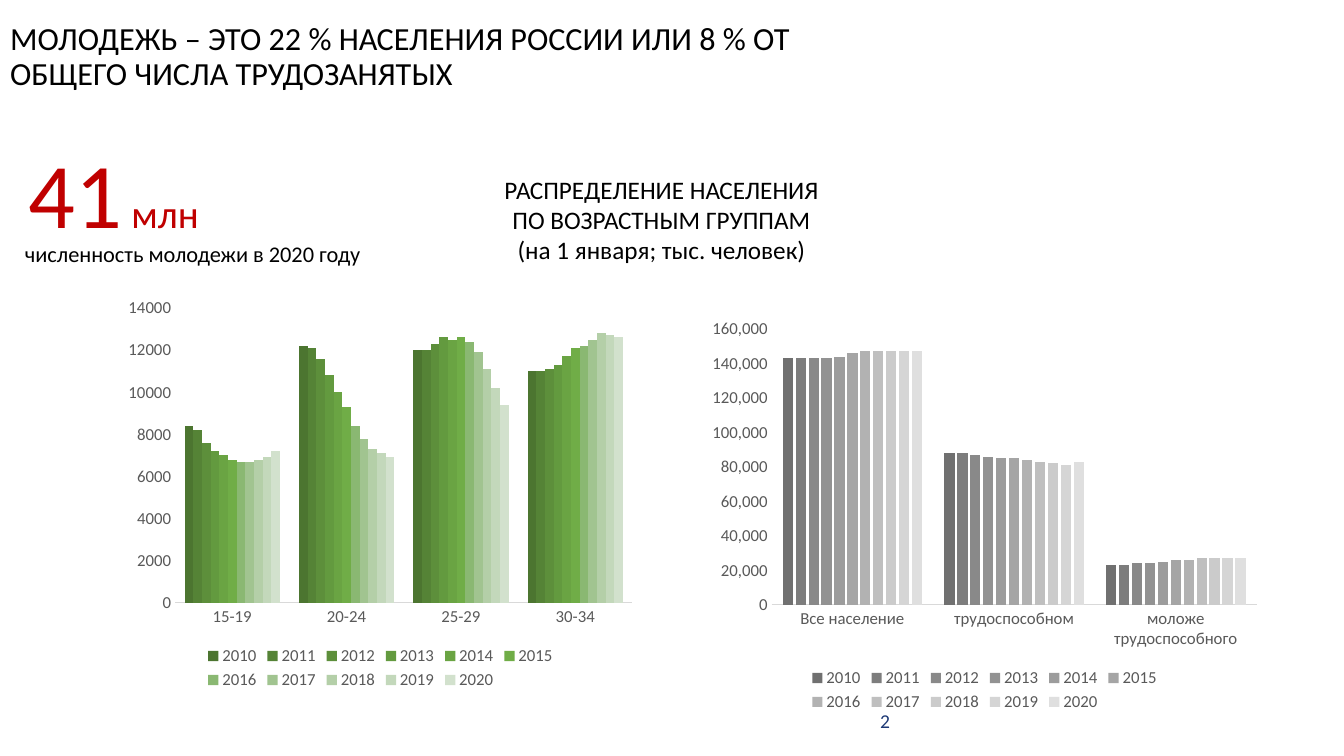
"""Builds a slide on the number of young people in Russia, with two column charts by year."""
from pptx import Presentation
from pptx.chart.data import CategoryChartData
from pptx.dml.color import RGBColor
from pptx.enum.chart import XL_CHART_TYPE, XL_LEGEND_POSITION, XL_TICK_MARK
from pptx.enum.text import MSO_ANCHOR, PP_ALIGN
from pptx.util import Pt

PX = 12192000 / 1344
FONT = "Calibri"
BLACK = RGBColor(0x00, 0x00, 0x00)
RED = RGBColor(0xC0, 0x00, 0x00)
NAVY = RGBColor(0x1D, 0x39, 0x75)
LABEL_GRAY = RGBColor(0x59, 0x59, 0x59)
AXIS_GRAY = RGBColor(0xD9, 0xD9, 0xD9)
GREENS = [RGBColor.from_string(shade) for shade in (
    "4C7530 558336 5D8F3B 639A3F 6AA443 70AD47 8AB872 A1C490 B4CFA8 C3D8BB D2E1CD").split()]
GRAYS = [RGBColor.from_string(shade) for shade in (
    "707070 7D7D7D 898989 929292 9C9C9C A5A5A5 B2B2B2 BFBFBF CBCBCB D5D5D5 DFDFDF").split()]
YEARS = range(2010, 2021)


def px(*lengths):
    return [round(length * PX) for length in lengths]


def write(text, box, holder=None, size=18, color=BLACK, align=PP_ALIGN.LEFT,
          anchor=MSO_ANCHOR.TOP, spacing=1.0):
    left, top, width, height = px(*box)
    if holder is None:
        holder = slide.shapes.add_textbox(left, top, width, height)
    holder.left, holder.top, holder.width, holder.height = left, top, width, height
    frame = holder.text_frame
    frame.word_wrap = True
    frame.vertical_anchor = anchor
    frame.text = text
    for paragraph in frame.paragraphs:
        paragraph.alignment = align
        paragraph.line_spacing = spacing
        for run in paragraph.runs:
            run.font.name = FONT
            run.font.size = Pt(size)
            run.font.color.rgb = color
    return frame.paragraphs[0]


presentation = Presentation()
presentation.slide_width, presentation.slide_height = px(1344, 756)
slide = presentation.slides.add_slide(presentation.slide_layouts[5])

write("МОЛОДЕЖЬ – ЭТО 22 % НАСЕЛЕНИЯ РОССИИ ИЛИ 8 % ОТ ОБЩЕГО ЧИСЛА ТРУДОЗАНЯТЫХ",
      (0, 20, 872, 75), slide.shapes.title, size=23, anchor=MSO_ANCHOR.MIDDLE, spacing=0.9)
write("2", (446, 701, 454, 40), size=14, color=NAVY, align=PP_ALIGN.RIGHT,
      anchor=MSO_ANCHOR.MIDDLE)
write("численность молодежи в 2020 году", (15, 235, 371, 37), size=16)
write("РАСПРЕДЕЛЕНИЕ НАСЕЛЕНИЯ\nПО ВОЗРАСТНЫМ ГРУППАМ\n(на 1 января; тыс. человек)",
      (355, 169, 613, 102), align=PP_ALIGN.CENTER)
youth_total = write("41", (19, 131, 207, 122), size=66, color=RED)
youth_unit = youth_total.add_run()
youth_unit.text = " млн"
youth_unit.font.name = FONT
youth_unit.font.size = Pt(28)
youth_unit.font.color.rgb = RED

youth_by_age = {
    "15-19": [8400, 8200, 7600, 7200, 7000, 6800, 6700, 6700, 6800, 6900, 7200],
    "20-24": [12200, 12100, 11600, 10800, 10000, 9300, 8400, 7800, 7300, 7100, 6900],
    "25-29": [12000, 12000, 12300, 12600, 12500, 12600, 12400, 11900, 11100, 10200, 9400],
    "30-34": [11000, 11000, 11100, 11300, 11700, 12100, 12200, 12500, 12800, 12700, 12600],
}
population_by_group = {
    "Все население": [143000, 143000, 143000, 143000, 144000, 146000, 147000, 147000,
                      147000, 147000, 147000],
    "трудоспособном": [88000, 88000, 87000, 86000, 85000, 85000, 84000, 83000,
                       82000, 81000, 83000],
    "моложе трудоспособного": [23000, 23000, 24000, 24000, 25000, 26000, 26000, 27000,
                               27000, 27000, 27000],
}

for groups, box, shades, overlap, number_format, top_value, step in (
    (youth_by_age, (118, 290, 525, 404), GREENS, 0, "General", 14000, 2000),
    (population_by_group, (701, 311, 567, 405), GRAYS, -27, "#,##0", 160000, 20000),
):
    population = CategoryChartData(number_format=number_format)
    population.categories = list(groups)
    for year, values in zip(YEARS, zip(*groups.values())):
        population.add_series(str(year), values)
    chart = slide.shapes.add_chart(XL_CHART_TYPE.COLUMN_CLUSTERED, *px(*box), population).chart
    chart.has_title = False
    chart.font.name = FONT
    chart.font.size = Pt(12)
    chart.font.color.rgb = LABEL_GRAY
    chart.has_legend = True
    chart.legend.position = XL_LEGEND_POSITION.BOTTOM
    chart.legend.include_in_layout = False

    columns = chart.plots[0]
    columns.vary_by_categories = False
    columns.gap_width = 219
    columns.overlap = overlap
    for series, shade in zip(columns.series, shades):
        series.format.fill.solid()
        series.format.fill.fore_color.rgb = shade

    for axis in (chart.category_axis, chart.value_axis):
        axis.major_tick_mark = XL_TICK_MARK.NONE
        axis.minor_tick_mark = XL_TICK_MARK.NONE
        axis.has_major_gridlines = False
    chart.category_axis.format.line.color.rgb = AXIS_GRAY
    chart.category_axis.format.line.width = Pt(0.75)
    chart.value_axis.format.line.fill.background()
    chart.value_axis.minimum_scale = 0
    chart.value_axis.maximum_scale = top_value
    chart.value_axis.major_unit = step
    chart.value_axis.tick_labels.number_format = number_format
    chart.value_axis.tick_labels.number_format_is_linked = False

presentation.save("out.pptx")
